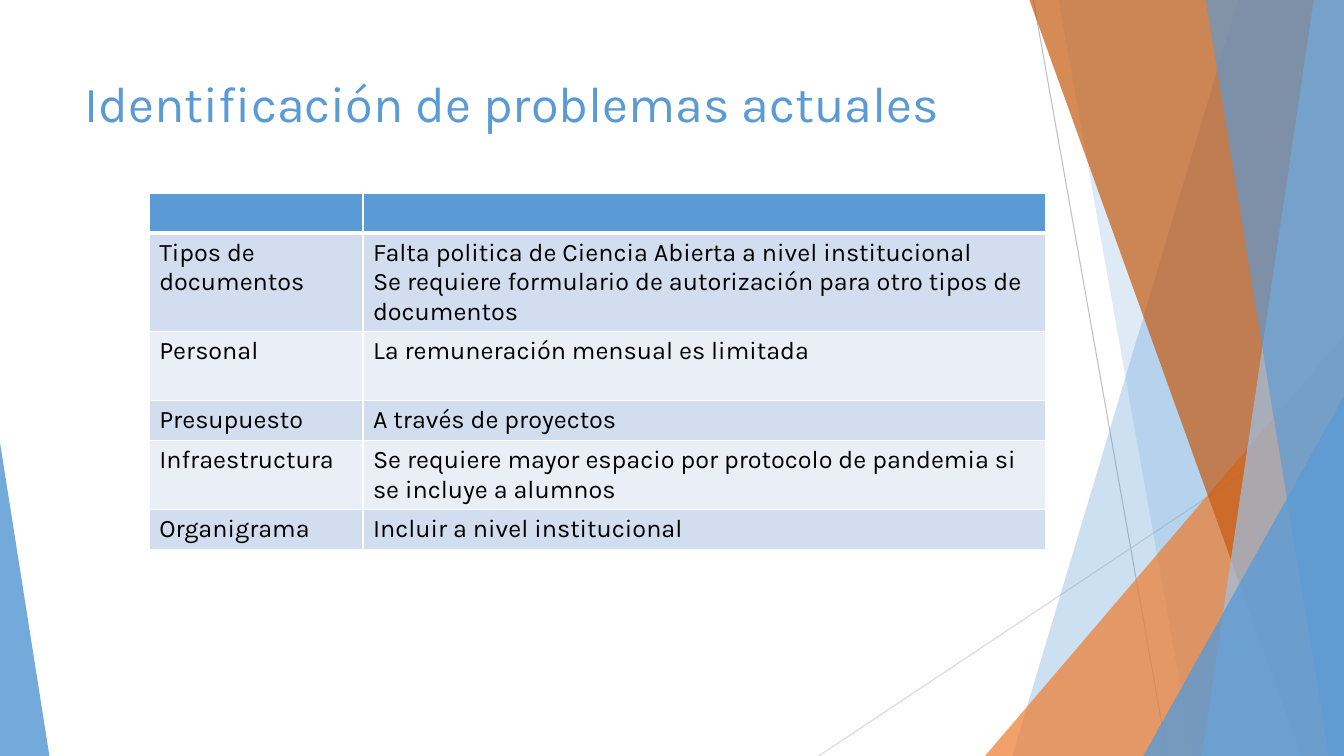
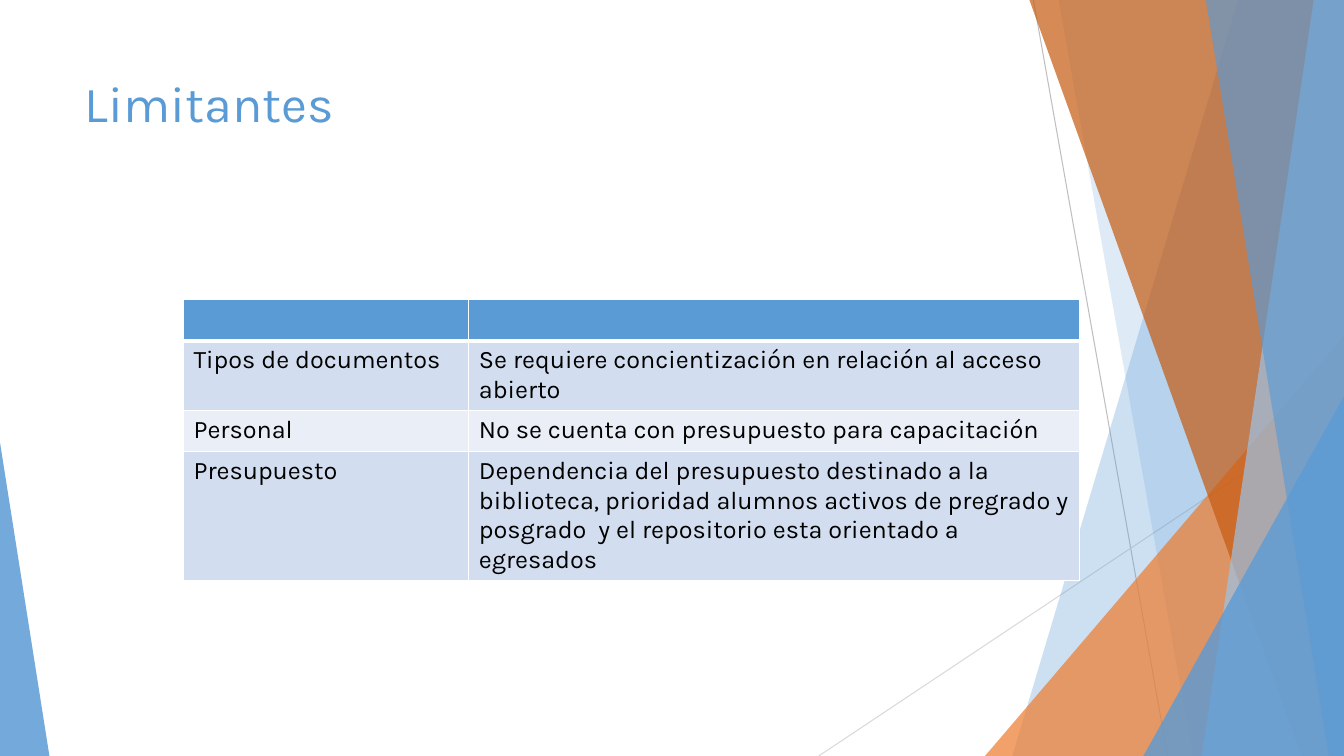
from dataclasses import dataclass

from lxml.etree import SubElement
from pptx import Presentation
from pptx.dml.color import RGBColor
from pptx.enum.shapes import MSO_CONNECTOR, MSO_SHAPE
from pptx.enum.text import MSO_ANCHOR, MSO_AUTO_SIZE, PP_ALIGN
from pptx.oxml.ns import qn
from pptx.util import Inches, Pt

SLIDE_WIDTH, SLIDE_HEIGHT = 13.33, 7.5


@dataclass(frozen=True)
class Theme:
    font: str = "Karla"
    title_size: int = 36
    body_size: int = 18
    blue: str = "5B9BD5"
    light_blue: str = "9DC3E6"
    orange: str = "ED7D31"
    dark_orange: str = "C55A11"
    line_grey: str = "BFBFBF"
    pale_grey: str = "D9D9D9"
    text: str = "000000"
    border: str = "FFFFFF"
    bands: tuple = ("D2DEEF", "EAEFF7")
    line_width: float = 0.75
    border_width: int = 1
    header_border_width: int = 3


class Deck:
    """Holds the theme, the presentation and the current slide."""

    def __init__(self, theme):
        self.theme = theme
        self.presentation = Presentation()
        self.presentation.slide_width = Inches(SLIDE_WIDTH)
        self.presentation.slide_height = Inches(SLIDE_HEIGHT)
        self.layout = self.presentation.slide_layouts[5]
        self.slide = None

    def add_slide(self, title):
        first = self.slide is None
        self.slide = self.presentation.slides.add_slide(self.layout)
        if first:
            self.decorate_layout()
        self.add_title(title)

    # Shared background: drawn once, then kept in the layout
    def decorate_layout(self):
        theme = self.theme
        for placeholder in list(self.layout.placeholders)[1:]:
            placeholder.element.getparent().remove(placeholder.element)
        group = self.slide.shapes.add_group_shape()
        self.add_line(group, (10.25, 0), (11.58, SLIDE_HEIGHT), theme.line_grey)
        self.add_line(group, (SLIDE_WIDTH, 4.03), (8.12, SLIDE_HEIGHT), theme.pale_grey)
        self.add_band(group, 12.28, 10.04, theme.blue, 30)
        self.add_band(group, 10.5, 11.83, theme.blue, 20)
        self.add_triangle(group, 9.77, 3.33, 3.56, 1, theme.orange, 72)
        self.add_band(group, 10.21, 12.91, theme.dark_orange, 70)
        self.add_band(group, 13.03, 11.92, theme.light_blue, 70)
        self.add_band(group, 11.96, 13.18, theme.blue, 65)
        self.add_triangle(group, 11.34, 3.93, 1.99, 1, theme.blue, 80)
        self.add_triangle(group, 0, 4.39, 0.49, 0, theme.blue, 85)
        self.layout.shapes.element.insert(2, group.element)

    def add_line(self, group, start, end, color):
        points = [Inches(value) for value in (*start, *end)]
        connector = group.shapes.add_connector(MSO_CONNECTOR.STRAIGHT, *points)
        connector.line.color.rgb = RGBColor.from_string(color)
        connector.line.width = Pt(self.theme.line_width)
        SubElement(connector.element.spPr, qn("a:effectLst"))

    def add_band(self, group, top_x, bottom_x, color, opacity):
        """Band from a slanted left edge to the right edge of the slide."""
        corners = [(SLIDE_WIDTH, 0), (SLIDE_WIDTH, SLIDE_HEIGHT), (bottom_x, SLIDE_HEIGHT)]
        builder = group.shapes.build_freeform(Inches(top_x), 0)
        builder.add_line_segments([(Inches(x), Inches(y)) for x, y in corners])
        self.paint(builder.convert_to_shape(), color, opacity)

    def add_triangle(self, group, left, top, width, apex, color, opacity):
        """Triangle that stands on the bottom edge of the slide."""
        shape = group.shapes.add_shape(
            MSO_SHAPE.ISOSCELES_TRIANGLE, Inches(left), Inches(top),
            Inches(width), Inches(SLIDE_HEIGHT - top))
        shape.adjustments[0] = apex
        self.paint(shape, color, opacity)

    def paint(self, shape, color, opacity):
        shape.shadow.inherit = False
        shape.line.fill.background()
        shape.fill.solid()
        shape.fill.fore_color.rgb = RGBColor.from_string(color)
        color_element = shape.element.spPr.find(qn("a:solidFill"))[0]
        SubElement(color_element, qn("a:alpha"), val=str(opacity * 1000))

    # Text
    def add_run(self, paragraph, text, size, color):
        paragraph.alignment = PP_ALIGN.LEFT
        run = paragraph.add_run()
        run.text = text
        run.font.name = self.theme.font
        run.font.size = Pt(size)
        run.font.color.rgb = RGBColor.from_string(color)

    def add_title(self, text):
        title = self.slide.shapes.title
        title.left, title.top = Inches(0.74), Inches(0.67)
        title.width, title.height = Inches(9.4), Inches(1.44)
        frame = title.text_frame
        frame.word_wrap = True
        frame.auto_size = MSO_AUTO_SIZE.NONE
        frame.vertical_anchor = MSO_ANCHOR.TOP
        self.add_run(frame.paragraphs[0], text, self.theme.title_size, self.theme.blue)

    # Table: an empty header row above banded rows
    def add_table(self, left, top, widths, heights, rows):
        theme = self.theme
        table = self.slide.shapes.add_table(
            len(heights), len(widths), Inches(left), Inches(top),
            Inches(sum(widths)), Inches(sum(heights))).table
        for column, width in zip(table.columns, widths):
            column.width = Inches(width)
        for row, height in zip(table.rows, heights):
            row.height = Inches(height)
        for column in range(len(widths)):
            header = table.cell(0, column)
            header.margin_top = header.margin_bottom = Inches(0.03)
            self.style_cell(header, theme.blue, bottom=theme.header_border_width)
        for row_number, row_texts in enumerate(rows, 1):
            fill = theme.bands[(row_number - 1) % 2]
            top_width = theme.header_border_width if row_number == 1 else theme.border_width
            for column, text in enumerate(row_texts):
                cell = table.cell(row_number, column)
                self.style_cell(cell, fill, top=top_width)
                frame = cell.text_frame
                for index, line in enumerate(text.split("\n")):
                    paragraph = frame.add_paragraph() if index else frame.paragraphs[0]
                    self.add_run(paragraph, line, theme.body_size, theme.text)

    def style_cell(self, cell, fill, top=None, bottom=None):
        properties = cell._tc.get_or_add_tcPr()
        default = self.theme.border_width
        for side, width in (("L", default), ("R", default),
                            ("T", top or default), ("B", bottom or default)):
            line = SubElement(properties, qn(f"a:ln{side}"), w=str(Pt(width)))
            solid = SubElement(line, qn("a:solidFill"))
            SubElement(solid, qn("a:srgbClr"), val=self.theme.border)
        cell.fill.solid()
        cell.fill.fore_color.rgb = RGBColor.from_string(fill)


def main():
    deck = Deck(Theme())

    # Current problems
    deck.add_slide("Identificación de problemas actuales")
    deck.add_table(1.48, 1.92, (2.12, 6.77), (0.39, 0.98, 0.68, 0.4, 0.68, 0.4), (
        ("Tipos de documentos",
         "Falta politica de Ciencia Abierta a nivel institucional\n"
         "Se requiere formulario de autorización para otro tipos de documentos"),
        ("Personal", "La remuneración mensual es limitada"),
        ("Presupuesto", "A través de proyectos"),
        ("Infraestructura",
         "Se requiere mayor espacio por protocolo de pandemia si se incluye a alumnos"),
        ("Organigrama", "Incluir a nivel institucional"),
    ))

    # Limitations
    deck.add_slide("Limitantes")
    deck.add_table(1.82, 2.97, (2.83, 6.06), (0.41, 0.69, 0.41, 1.28), (
        ("Tipos de documentos", "Se requiere concientización en relación al acceso abierto"),
        ("Personal", "No se cuenta con presupuesto para capacitación"),
        ("Presupuesto",
         "Dependencia del presupuesto destinado a la biblioteca, prioridad alumnos "
         "activos de pregrado y posgrado  y el repositorio esta orientado a egresados"),
    ))

    deck.presentation.save("out.pptx")


if __name__ == "__main__":
    main()
